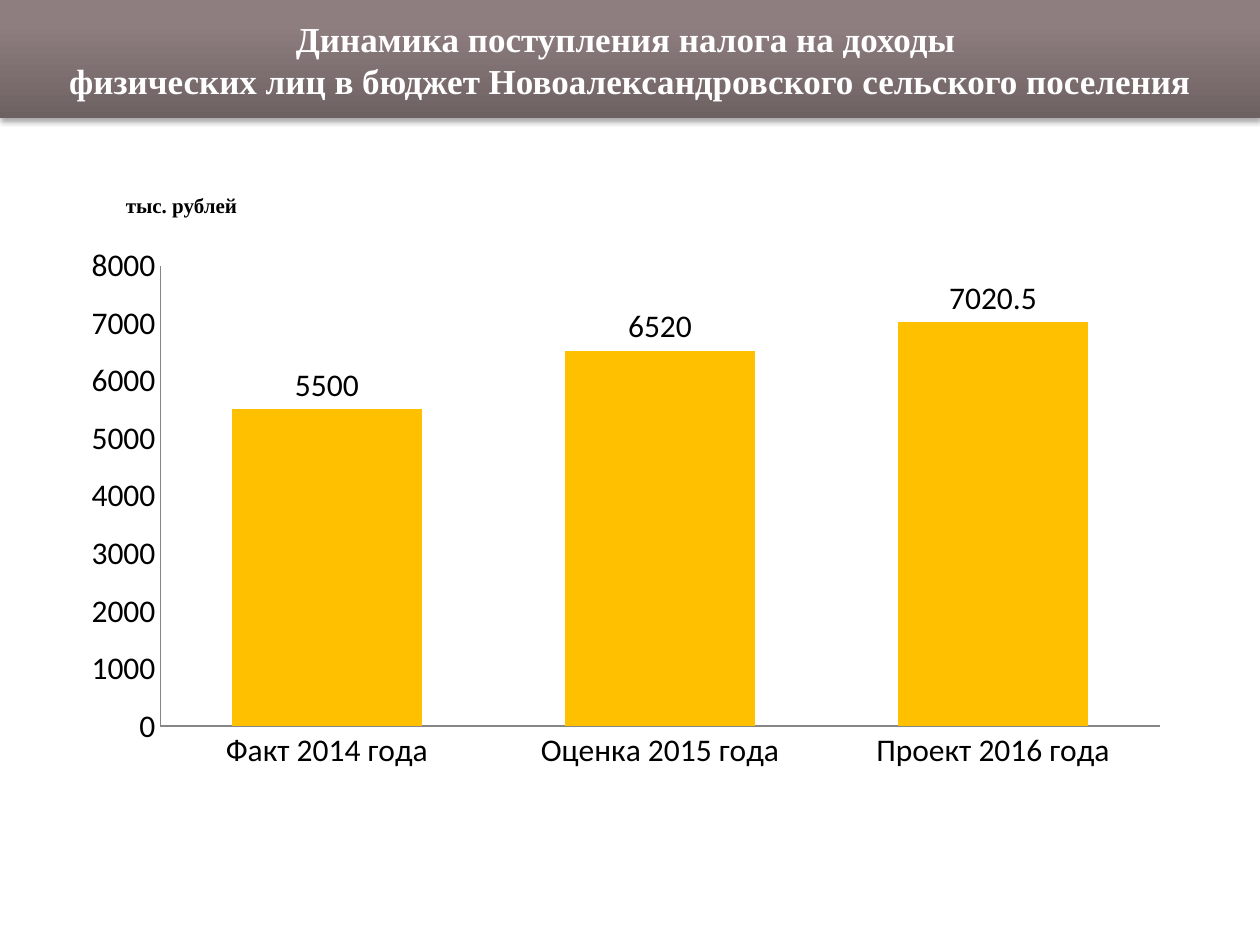
"""Builds a slide with a column chart of income tax receipts."""
from dataclasses import dataclass

from lxml import etree
from pptx import Presentation
from pptx.chart.data import CategoryChartData
from pptx.dml.color import RGBColor
from pptx.enum.chart import XL_CHART_TYPE, XL_LABEL_POSITION, XL_TICK_MARK
from pptx.enum.shapes import MSO_SHAPE
from pptx.enum.text import MSO_ANCHOR, MSO_AUTO_SIZE, PP_ALIGN
from pptx.oxml.ns import qn
from pptx.util import Inches, Pt

RECT = MSO_SHAPE.RECTANGLE
COLUMNS = XL_CHART_TYPE.COLUMN_CLUSTERED
OUTSIDE_END = XL_LABEL_POSITION.OUTSIDE_END
NO_TICK = XL_TICK_MARK.NONE
MIDDLE = MSO_ANCHOR.MIDDLE
GROW = MSO_AUTO_SIZE.SHAPE_TO_FIT_TEXT
CENTER = PP_ALIGN.CENTER


@dataclass(frozen=True)
class Theme:
    """Colours, fonts and type sizes of the slide."""
    white: RGBColor = RGBColor(0xFF, 0xFF, 0xFF)
    black: RGBColor = RGBColor(0, 0, 0)
    band_dark: RGBColor = RGBColor(0x6E, 0x61, 0x62)
    band_light: RGBColor = RGBColor(0x8E, 0x7E, 0x7F)
    column: RGBColor = RGBColor(0xFF, 0xC0, 0x00)
    axis: RGBColor = RGBColor(0x86, 0x86, 0x86)
    text_font: str = "Times New Roman"
    chart_font: str = "Calibri"
    title_size: Pt = Pt(20)
    unit_size: Pt = Pt(12)
    chart_size: Pt = Pt(18)


THEME = Theme()


def set_font(font, name, size, color, bold=False):
    """Apply a typeface, size, colour and weight to a font."""
    font.name, font.size, font.bold = name, size, bold
    font.color.rgb = color


def write_lines(tf, lines, size, color):
    """Write centred bold lines, one paragraph each."""
    for i, line in enumerate(lines):
        p = tf.add_paragraph() if i else tf.paragraphs[0]
        p.text = line
        p.alignment = CENTER
        set_font(p.font, THEME.text_font, size, color, bold=True)


def add_drop_shadow(sp):
    """Give a shape a soft shadow that falls straight down."""
    sp.shadow.inherit = False
    effects = sp._element.spPr.find(qn("a:effectLst"))
    shadow = etree.SubElement(
        effects, qn("a:outerShdw"), blurRad=str(Pt(3.1)), dist=str(Pt(1.8)),
        dir="5400000", rotWithShape="0")
    color = etree.SubElement(shadow, qn("a:srgbClr"), val=str(THEME.black))
    etree.SubElement(color, qn("a:alpha"), val="35000")


def add_title_band(s, lines, left, top, width, height):
    """Add the gradient band with the slide title."""
    sp = s.shapes.add_shape(RECT, left, top, width, height)
    sp.line.fill.background()
    sp.fill.gradient()
    sp.fill.gradient_angle = 90
    stops = ((0, THEME.band_dark), (0.8, THEME.band_light))
    for stop, (position, color) in zip(sp.fill.gradient_stops, stops):
        stop.position = position
        stop.color.rgb = color
    add_drop_shadow(sp)
    tf = sp.text_frame
    tf.word_wrap = True
    tf.vertical_anchor = MIDDLE
    write_lines(tf, lines, THEME.title_size, THEME.white)


def add_label(s, text, left, top, width, height):
    """Add a small bold caption."""
    tf = s.shapes.add_textbox(left, top, width, height).text_frame
    tf.word_wrap = True
    tf.auto_size = GROW
    write_lines(tf, [text], THEME.unit_size, THEME.black)


def add_column_chart(s, values, left, top, width, height):
    """Add a single-series column chart with value labels."""
    data = CategoryChartData()
    data.categories = list(values)
    data.add_series("Series 1", list(values.values()))
    chart = s.shapes.add_chart(COLUMNS, left, top, width, height, data).chart
    chart.has_legend = False
    chart.has_title = False
    set_font(chart.font, THEME.chart_font, THEME.chart_size, THEME.black)

    for axis in (chart.category_axis, chart.value_axis):
        axis.has_major_gridlines = False
        axis.major_tick_mark = axis.minor_tick_mark = NO_TICK
        axis.format.line.color.rgb = THEME.axis
    chart.value_axis.minimum_scale = 0
    chart.value_axis.maximum_scale = 8000
    chart.value_axis.major_unit = 1000

    plot = chart.plots[0]
    plot.gap_width = 75
    plot.vary_by_categories = False
    plot.has_data_labels = True
    plot.data_labels.show_value = True
    plot.data_labels.position = OUTSIDE_END
    fill = plot.series[0].format.fill
    fill.solid()
    fill.fore_color.rgb = THEME.column


def main():
    """Build and save the presentation."""
    prs = Presentation()
    prs.slide_width, prs.slide_height = Inches(10), Inches(7.5)
    s = prs.slides.add_slide(prs.slide_layouts[6])
    title = (
        "Динамика поступления налога на доходы ",
        "физических лиц в бюджет Новоалександровского сельского поселения",
    )
    receipts = {
        "Факт 2014 года": 5500,
        "Оценка 2015 года": 6520,
        "Проект 2016 года": 7020.5,
    }
    add_title_band(s, title, 0, 0, prs.slide_width, Inches(0.94))
    add_column_chart(s, receipts, Inches(0.55), Inches(1.87),
                     Inches(8.83), Inches(4.32))
    add_label(s, "тыс. рублей", Inches(0.7), Inches(1.48),
              Inches(1.48), Inches(0.3))
    prs.save("out.pptx")


if __name__ == "__main__":
    main()
